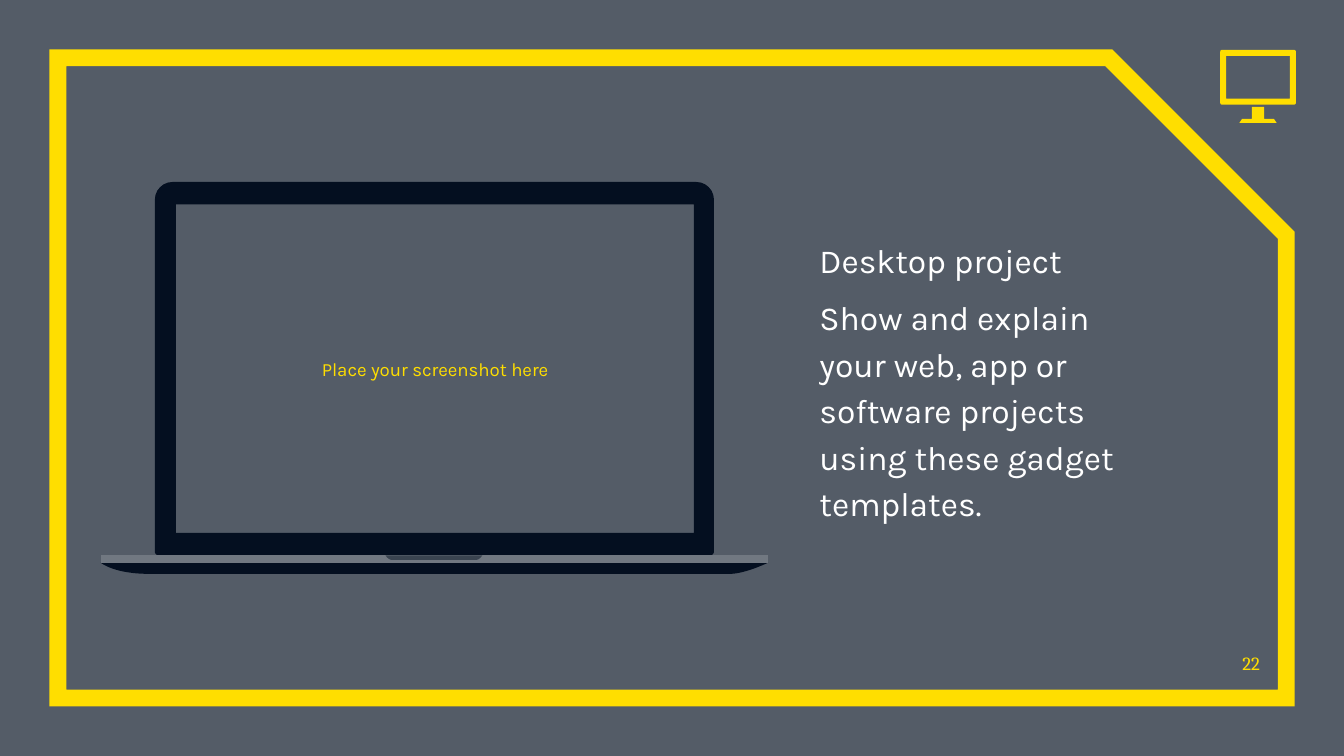
import math

import lxml.etree
import pptx
import pptx.dml.color
import pptx.enum.shapes
import pptx.enum.text
import pptx.oxml.ns
import pptx.util

Pt = pptx.util.Pt
Kind = pptx.enum.shapes.MSO_SHAPE
Side = pptx.enum.text.PP_ALIGN
Hold = pptx.enum.text.MSO_ANCHOR

GOLD, NAVY, SLATE = "FFDE00", "040F20", "545C67"
GREY, NOTCH, WHITE = "717881", "3A4450", "FFFFFF"


def tint(code):
    """Turn a hex string into a colour."""
    return pptx.dml.color.RGBColor.from_string(code)


def rect(left, top, wide, high):
    """List the corners of a rectangle."""
    right, base = left + wide, top + high
    return [(left, top), (right, top), (right, base), (left, base)]


def arc(mid_x, mid_y, size, start):
    """List points on a quarter circle, clockwise from an angle."""
    turns = [math.radians(start + 15 * step) for step in range(7)]
    return [(mid_x + size * math.cos(turn), mid_y + size * math.sin(turn))
            for turn in turns]


def curve(*knots):
    """List points on a cubic curve with four knots."""
    points = []
    for step in range(13):
        part = step / 12
        rest = 1 - part
        parts = (rest ** 3, 3 * rest ** 2 * part, 3 * rest * part ** 2, part ** 3)
        points.append(tuple(sum(share * knot[axis] for share, knot in zip(parts, knots))
                            for axis in (0, 1)))
    return points


def draw(slide, box, paths, fill):
    """Draw closed paths, given relative to a box, as one filled shape."""
    left, top = box[:2]
    maker = None
    for path in paths:
        points = [(Pt(left + x), Pt(top + y)) for x, y in path]
        if maker is None:
            maker = slide.shapes.build_freeform(*points[0], scale=1.0)
        else:
            maker.move_to(*points[0])
        maker.add_line_segments(points[1:], close=True)
    shape = maker.convert_to_shape()
    shape.shadow.inherit = False
    shape.fill.solid()
    shape.fill.fore_color.rgb = tint(fill)
    shape.line.fill.background()


def write(slide, box, lines, font, size, color, align, anchor, space=1.0):
    """Write paragraphs in a text box."""
    frame = slide.shapes.add_textbox(*map(Pt, box)).text_frame
    frame.word_wrap = True
    frame.margin_left = frame.margin_right = Pt(0)
    frame.margin_top = frame.margin_bottom = Pt(0)
    frame.vertical_anchor = anchor
    frame.text = "\n".join(lines)
    for index, para in enumerate(frame.paragraphs):
        para.alignment = align
        para.line_spacing = space
        para.space_before = Pt(6 if index else 0)
        for run in para.runs:
            run.font.name = font
            run.font.size = Pt(size)
            run.font.color.rgb = tint(color)


def border(slide, box):
    """Draw the gold border with its cut corner."""
    shape = slide.shapes.add_shape(Kind.SNIP_1_RECTANGLE, *map(Pt, box))
    shape.adjustments[0] = 0.277
    shape.shadow.inherit = False
    shape.fill.background()
    shape.line.color.rgb = tint(GOLD)
    shape.line.width = Pt(9)
    join = lxml.etree.SubElement(shape.line._get_or_add_ln(),
                                 pptx.oxml.ns.qn("a:miter"))
    join.set("lim", "800000")


def laptop(slide, box):
    """Draw the laptop and the prompt on its screen."""
    left, top, wide, high = box
    edge, lid, deck, foot = 29, 200, 204, high
    right = wide - edge
    case = (arc(edge + 9.5, 9.5, 9.5, 180) + arc(right - 9.5, 9.5, 9.5, 270)
            + arc(right - 2, lid - 2, 2, 0) + arc(edge + 2, lid - 2, 2, 90))
    screen = (edge + 11.3, 12, right - edge - 22, 176)
    draw(slide, box, [case, rect(*screen)[::-1]], NAVY)
    base = (curve((0, deck), (0, deck), (7, foot), (26, foot))
            + curve((337, foot), (345, foot), (wide, deck), (wide, deck)))
    draw(slide, box, [base], NAVY)
    draw(slide, box, [rect(0, lid, wide, deck - lid)], GREY)
    grip = (curve((152.5, lid), (152.5, lid), (154, 202.5), (156, 202.5))
            + curve((201, 202.5), (203, 202.5), (204.5, lid), (204.5, lid)))
    draw(slide, box, [grip], NOTCH)
    area = (left + screen[0], top + screen[1], *screen[2:])
    write(slide, area, ["Place your screenshot here"], "Karla", 10, GOLD,
          Side.CENTER, Hold.MIDDLE)


def icon(slide, box):
    """Draw the desktop monitor icon."""
    wide, high = box[2:]
    mid = wide / 2
    stand = [(mid - 3.3, 30.6), (mid + 3.3, 30.6), (mid + 3.3, 37), (mid + 8.5, 37),
             (mid + 10, high), (mid - 10, high), (mid - 8.5, 37), (mid - 3.3, 37)]
    draw(slide, box, [stand], GOLD)
    rim = (arc(1, 1, 1, 180) + arc(wide - 1, 1, 1, 270)
           + arc(wide - 1, 28.4, 1, 0) + arc(1, 28.4, 1, 90))
    draw(slide, box, [rim, rect(3.2, 3.2, wide - 6.4, 23)[::-1]], GOLD)


def story(slide, box):
    """Write the project text."""
    lines = ["Desktop project",
             "Show and explain your web, app or software projects "
             "using these gadget templates."]
    write(slide, box, lines, "Karla", 18, WHITE, Side.LEFT, Hold.MIDDLE, 1.15)


def number(slide, box):
    """Write the page number."""
    write(slide, box, ["22"], "Cambria", 10, GOLD, Side.RIGHT, Hold.BOTTOM)


def main():
    """Build the slide and save it."""
    deck = pptx.Presentation()
    deck.slide_width, deck.slide_height = Pt(720), Pt(405)
    slide = deck.slides.add_slide(deck.slide_layouts[6])
    slide.background.fill.solid()
    slide.background.fill.fore_color.rgb = tint(SLATE)
    border(slide, (31, 31, 658, 343))
    laptop(slide, (54, 97.5, 357.5, 210))
    icon(slide, (653.7, 26.7, 40.5, 39.2))
    story(slide, (439, 119.5, 163, 166.5))
    number(slide, (656, 341, 19, 20))
    deck.save("out.pptx")


if __name__ == "__main__":
    main()
